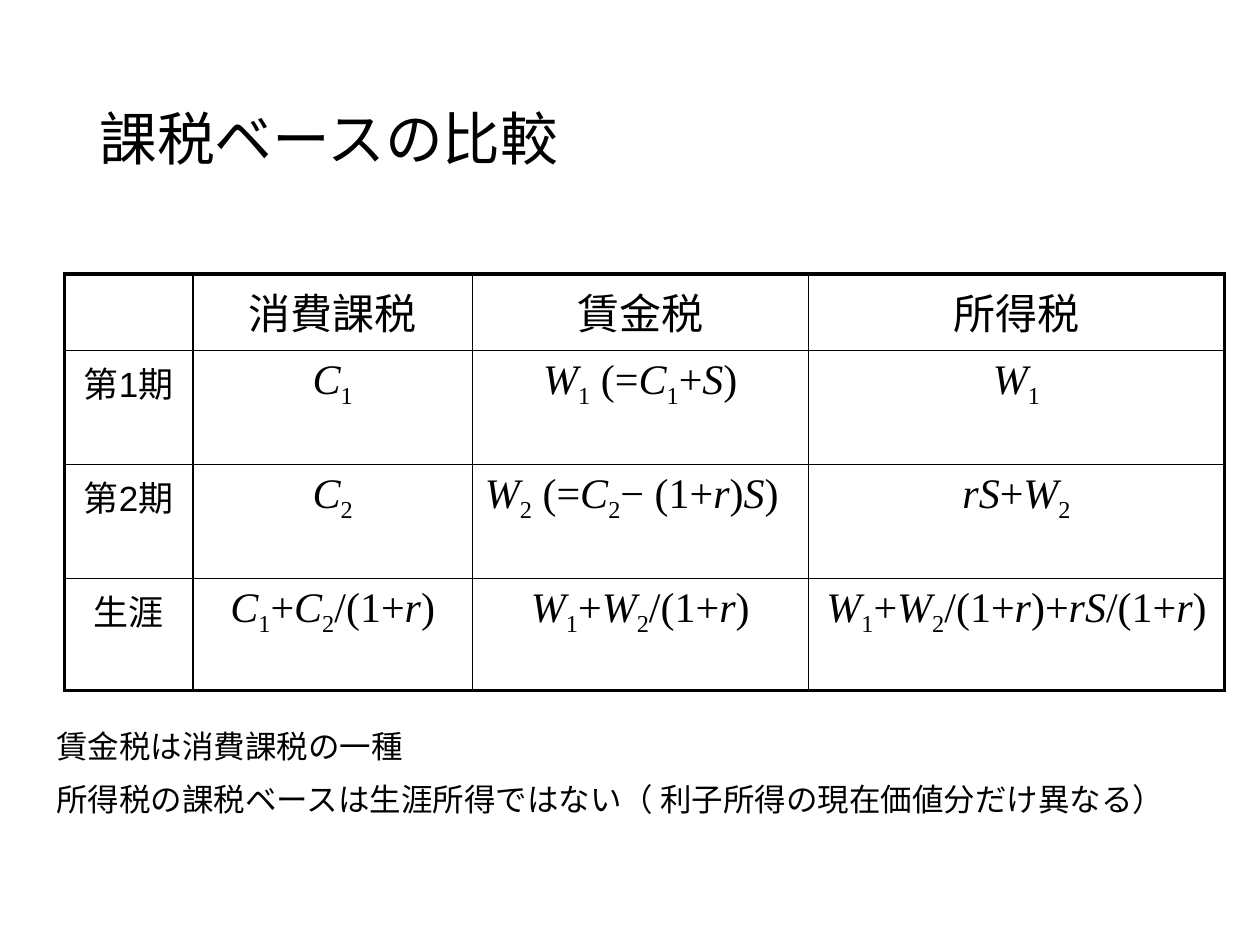
from itertools import groupby

from lxml import etree
from pptx import Presentation
from pptx.dml.color import RGBColor
from pptx.enum.text import MSO_ANCHOR, PP_ALIGN
from pptx.oxml.ns import qn
from pptx.util import Pt

CENTER, LEFT = PP_ALIGN.CENTER, PP_ALIGN.LEFT
MIDDLE = MSO_ANCHOR.MIDDLE
BLACK = "000000"
GOTHIC, SANS, SERIF = "Noto Sans CJK JP", "Arial", "Times New Roman"


def add_span(para, text, size, font, italic=False, subscript=False, color=BLACK):
    span = para.add_run()
    span.text = text
    span.font.size = Pt(size)
    span.font.name = font
    span.font.italic = italic
    span.font.color.rgb = RGBColor.from_string(color)
    properties = span.font._element
    etree.SubElement(properties, qn("a:ea")).set("typeface", GOTHIC)
    if subscript:
        properties.set("baseline", "-25000")


def set_border(cell, position, side, width, color=BLACK):
    line = etree.Element(qn(f"a:ln{side}"), w=str(Pt(width)))
    fill = etree.SubElement(line, qn("a:solidFill"))
    etree.SubElement(fill, qn("a:srgbClr"), val=color)
    cell._tc.get_or_add_tcPr().insert(position, line)


deck = Presentation()
deck.slide_width, deck.slide_height = Pt(720), Pt(540)
page = deck.slides.add_slide(deck.slide_layouts[6])

# Title
box = page.shapes.add_textbox(Pt(49.68), Pt(28.8), Pt(620.64), Pt(104.4))
box.text_frame.word_wrap = True
box.text_frame.vertical_anchor = MIDDLE
para = box.text_frame.paragraphs[0]
para.line_spacing = 0.9
add_span(para, "課税ベースの比較", 33, GOTHIC)

# Table of tax bases
rows = [
    ["", "消費課税", "賃金税", "所得税"],
    ["第1期", "C1", "W1 (=C1+S)", "W1"],
    ["第2期", "C2", "W2 (=C2− (1+r)S)", "rS+W2"],
    ["生涯", "C1+C2/(1+r)", "W1+W2/(1+r)", "W1+W2/(1+r)+rS/(1+r)"],
]
widths = [73.6, 159.6, 192, 238]
heights = [43.6, 65.2, 65.2, 64]
frame = page.shapes.add_table(len(rows), len(widths), Pt(36.72), Pt(156.6),
                              Pt(sum(widths)), Pt(sum(heights)))
table = frame.table
table.first_row = table.horz_banding = False
for column, width in zip(table.columns, widths):
    column.width = Pt(width)
for row, height in zip(table.rows, heights):
    row.height = Pt(height)

last_row, last_column = len(rows) - 1, len(widths) - 1
for r, texts in enumerate(rows):
    for c, text in enumerate(texts):
        cell = table.cell(r, c)
        cell.fill.background()
        outer = {"L": c == 0, "R": c == last_column, "T": r == 0, "B": r == last_row}
        for position, (side, is_outer) in enumerate(outer.items()):
            set_border(cell, position, side, 2.25 if is_outer else 1)
        para = cell.text_frame.paragraphs[0]
        para.alignment = LEFT if (r, c) == (2, 2) else CENTER
        if r == 0 or c == 0:
            if text:
                add_span(para, text, 24 if r == 0 else 20, SANS)
            continue
        # Formula: letters are italic, a digit after C or W is an index
        styled = [(char, char.isalpha(), char.isdigit() and before in "CW")
                  for before, char in zip(" " + text, text)]
        for (italic, subscript), group in groupby(styled, key=lambda item: item[1:]):
            add_span(para, "".join(item[0] for item in group), 24, SERIF,
                     italic=italic, subscript=subscript)

# Conclusions
box = page.shapes.add_textbox(Pt(25.2), Pt(411.84), Pt(652.32), Pt(61.92))
box.text_frame.word_wrap = True
notes = ["賃金税は消費課税の一種",
         "所得税の課税ベースは生涯所得ではない（ 利子所得の現在価値分だけ異なる）"]
for index, note in enumerate(notes):
    para = box.text_frame.add_paragraph() if index else box.text_frame.paragraphs[0]
    para.space_before = Pt(9 if index else 0)
    add_span(para, note, 18, GOTHIC)

deck.save("out.pptx")
